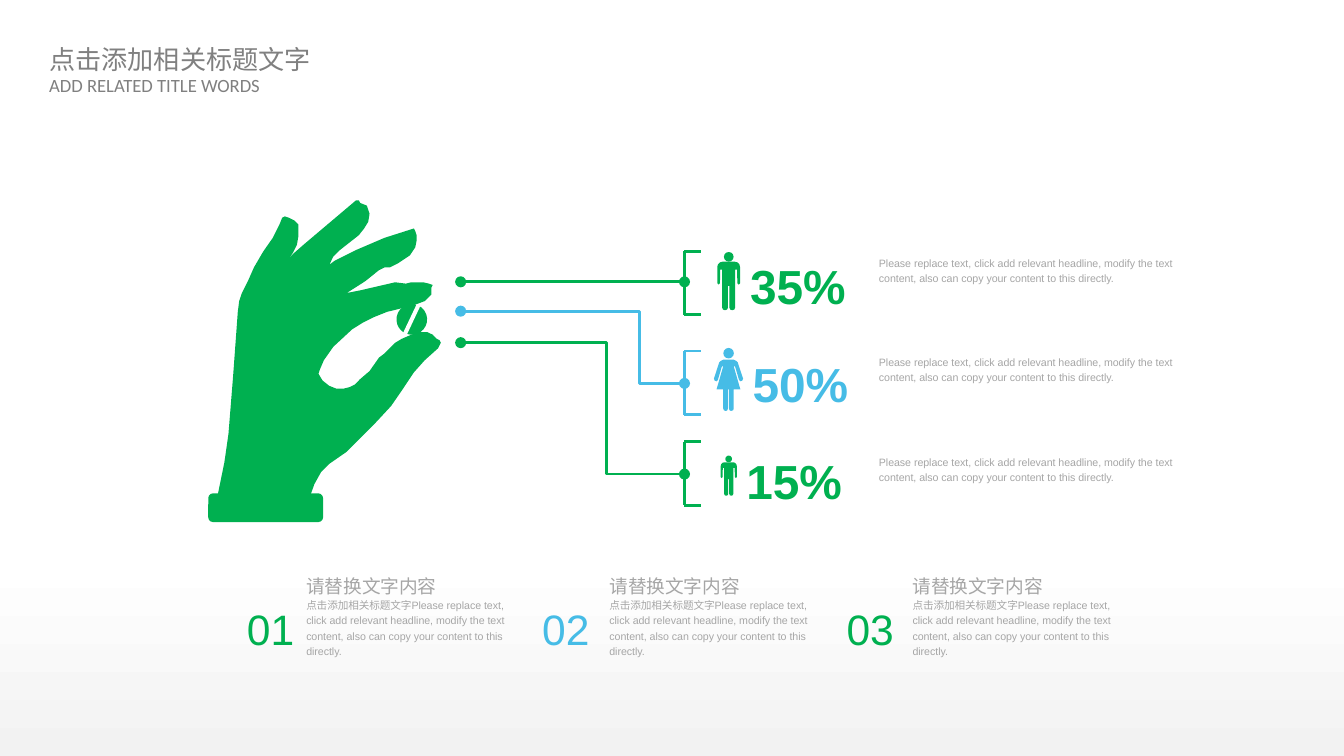
from lxml.etree import SubElement
from pptx import Presentation
from pptx.dml.color import RGBColor
from pptx.enum.shapes import MSO_CONNECTOR as Connector, MSO_SHAPE as Shape
from pptx.enum.text import MSO_ANCHOR as Anchor, PP_ALIGN as Align
from pptx.oxml.ns import qn
from pptx.util import Pt

GREEN = RGBColor(0x00, 0xB0, 0x50)
BLUE = RGBColor(0x46, 0xBC, 0xE6)
WHITE = RGBColor(0xFF, 0xFF, 0xFF)
PALE_GRAY = RGBColor(0xF2, 0xF2, 0xF2)
LIGHT_GRAY = RGBColor(0xA6, 0xA6, 0xA6)
GRAY = RGBColor(0x80, 0x80, 0x80)
CHINESE_FONT = "Noto Sans CJK SC"

TITLE = "点击添加相关标题文字"
DETAIL = ("Please replace text, click add relevant headline, modify the text "
          "content, also can copy your content to this directly.")

HAND = [
    (67, 229), (69, 226), (70, 222), (74, 211), (79, 202), (85, 196), (98, 187),
    (102, 183), (118, 167), (131, 153), (140, 140), (148, 128), (156, 119),
    (166, 110), (168, 106), (167, 104), (165, 103), (162, 100), (158, 98), (152, 98),
    (146, 100), (139, 103), (134, 106), (126, 114), (122, 117), (115, 127),
    (108, 133), (104, 137), (100, 139), (96, 140), (90, 140), (85, 138), (80, 134),
    (77, 129), (78, 126), (81, 119), (88, 109), (102, 96), (110, 91), (118, 87),
    (128, 83), (132, 82), (148, 78), (156, 75), (161, 70), (161, 65), (162, 63),
    (159, 62), (155, 61), (146, 61), (142, 62), (134, 61), (108, 67), (98, 69),
    (109, 62), (112, 60), (122, 52), (126, 50), (130, 50), (136, 47), (145, 41),
    (149, 35), (150, 30), (150, 26), (149, 23), (148, 21), (126, 28), (105, 37),
    (89, 45), (85, 48), (88, 42), (93, 37), (107, 26), (111, 21), (114, 16),
    (115, 10), (113, 4), (108, 2), (107, 0), (105, 0), (66, 33), (58, 40),
    (54, 45), (58, 39), (61, 33), (62, 27), (62, 18), (59, 15), (55, 13), (52, 12),
    (50, 13), (48, 18), (46, 22), (43, 28), (36, 38), (29, 50), (25, 59), (20, 69),
    (18, 75), (17, 83), (13.5, 131), (10, 174), (7, 195), (0, 229),
]
HAND_GRID = (169, 229)


def mirrored(half, width):
    return half + [(width - x, y) for x, y in reversed(half)]


MAN_GRID = (17, 36)
MAN = mirrored([
    (4, 0), (2, 0.5), (0.5, 2), (0, 4), (0, 16), (1, 17), (2, 16), (2.2, 6), (3.6, 6),
    (3.6, 34), (4.3, 35.5), (5.8, 36), (7.3, 35.5), (8, 34), (8, 18)], MAN_GRID[0])
WOMAN_GRID = (22, 39)
WOMAN = mirrored([
    (7, 1), (5, 2), (4, 3), (0, 15), (0.5, 16.5), (2, 17), (3, 16), (6, 6), (7, 6),
    (2, 23), (7, 23), (7, 37), (7.5, 38.5), (9, 39), (10.2, 38.5), (10.6, 37),
    (10.6, 23)], WOMAN_GRID[0])


def points(*values):
    return [Pt(value) for value in values]


def write_text(shape, text, size=5.7, color=LIGHT_GRAY, font="Arial", bold=False,
               align=Align.LEFT, anchor=Anchor.TOP, spacing=1.0, wrap=False,
               insets=(0, 0)):
    frame = shape.text_frame
    frame.word_wrap = wrap
    frame.vertical_anchor = anchor
    frame.margin_left = frame.margin_right = Pt(insets[0])
    frame.margin_top = frame.margin_bottom = Pt(insets[1])
    paragraph = frame.paragraphs[0]
    paragraph.alignment = align
    paragraph.line_spacing = spacing
    run = paragraph.add_run()
    run.text = text
    run.font.size = Pt(size)
    run.font.bold = bold
    run.font.color.rgb = color
    run.font.name = font
    SubElement(run.font._element, qn("a:ea"), typeface=CHINESE_FONT)


def add_text(slide, box, text, **style):
    write_text(slide.shapes.add_textbox(*points(*box)), text, **style)


def paint(shape, color):
    shape.shadow.inherit = False
    shape.fill.solid()
    shape.fill.fore_color.rgb = color
    shape.line.fill.background()


def add_preset(slide, kind, box, color, rotation=0):
    shape = slide.shapes.add_shape(kind, *points(*box))
    shape.rotation = rotation
    paint(shape, color)


def add_outline(slide, outline, grid, box, color):
    left, top, width, height = box
    placed = [points(left + x * width / grid[0], top + y * height / grid[1])
              for x, y in outline]
    builder = slide.shapes.build_freeform(*placed[0])
    builder.add_line_segments(placed[1:], close=True)
    paint(builder.convert_to_shape(), color)


def add_line(slide, start, end, color, bend=None, dots=False):
    kind = Connector.STRAIGHT if bend is None else Connector.ELBOW
    connector = slide.shapes.add_connector(kind, *points(*start, *end))
    connector.line.width = Pt(1.5)
    connector.line.color.rgb = color
    properties = connector._element.spPr
    if bend is not None:
        adjustments = properties.find(qn("a:prstGeom")).get_or_add_avLst()
        SubElement(adjustments, qn("a:gd"), name="adj1", fmla=f"val {round(bend * 100000)}")
    if dots:
        for tag in ("a:headEnd", "a:tailEnd"):
            SubElement(connector.line._get_or_add_ln(), qn(tag), type="oval")
    SubElement(properties, qn("a:effectLst"))


def add_heading(slide, left, top):
    title = slide.shapes.title
    title.left, title.top, title.width, title.height = points(left, top, 152, 22.3)
    write_text(title, TITLE, size=14, color=GRAY, font=CHINESE_FONT, insets=(5.67, 2.83))
    add_text(slide, (left, top + 16.5, 126, 17.3), "ADD RELATED TITLE WORDS",
             size=10, color=GRAY, font="Calibri", insets=(5.67, 2.83))


def add_hand(slide, left, top):
    add_outline(slide, HAND, HAND_GRID, (left + 3.6, top, 121.7, 165), GREEN)
    add_preset(slide, Shape.ROUNDED_RECTANGLE, (left, top + 157, 61.5, 15.4), GREEN)
    add_preset(slide, Shape.OVAL, (left + 100.8, top + 55.6, 16.4, 16.4), GREEN, 25.4)
    add_preset(slide, Shape.ROUNDED_RECTANGLE, (left + 107.9, top + 55.3, 2.2, 17),
               WHITE, 25.4)


def add_person(slide, outline, grid, box, color):
    left, top, width, height = box
    head = height / 6
    add_preset(slide, Shape.OVAL, (left + (width - head) / 2, top, head, head), color)
    add_outline(slide, outline, grid, (left, top + head, width, height - head), color)


def add_statistic(slide, left, top, color, value, value_left, value_top,
                  source, bend, person):
    height, arm = 34, 8.6
    add_line(slide, (left, top), (left, top + height), color)
    for y in (top, top + height):
        add_line(slide, (left, y), (left + arm, y), color)
    middle = top + height / 2 + 0.3 if bend else source[1]
    add_line(slide, source, (left, middle), color, bend=bend, dots=True)
    add_person(slide, *person, color)
    add_text(slide, (value_left, value_top, 51.8, 37.4), value, size=25.6, color=color,
             bold=True, anchor=Anchor.MIDDLE, spacing=1.2)


def add_step(slide, left, top, number, number_gap, color):
    add_text(slide, (left, top, 70.6, 14.4), "请替换文字内容", size=10,
             anchor=Anchor.MIDDLE, spacing=1.2)
    add_text(slide, (left, top + 13.7, 113, 33.1), TITLE + DETAIL,
             anchor=Anchor.MIDDLE, spacing=1.2, wrap=True)
    add_text(slide, (left - number_gap, top + 17.3, 29, 27.4), number, size=22.8,
             color=color, align=Align.CENTER, anchor=Anchor.BOTTOM)


def add_background(slide):
    fill = slide.background.fill
    fill.gradient()
    fill.gradient_angle = 90
    for stop, position, color in zip(fill.gradient_stops, (0, 0.26), (PALE_GRAY, WHITE)):
        stop.position = position
        stop.color.rgb = color


def main():
    presentation = Presentation()
    presentation.slide_width, presentation.slide_height = points(720, 405)
    slide = presentation.slides.add_slide(presentation.slide_layouts[5])
    add_background(slide)
    add_heading(slide, 20.7, 20.2)
    add_hand(slide, 111.6, 107.3)

    statistics = [
        (134.6, GREEN, "35%", 401.8, 131, (246.8, 151), None,
         (MAN, MAN_GRID, (384.3, 135, 12.2, 31.2))),
        (188.1, BLUE, "50%", 403.2, 183.4, (246.8, 166.7), 0.8,
         (WOMAN, WOMAN_GRID, (382.5, 186.4, 15.6, 33.8))),
        (236.7, GREEN, "15%", 399.8, 235.6, (246.8, 183.6), 0.65,
         (MAN, MAN_GRID, (386.1, 244.1, 8.6, 21.5))),
    ]
    for index, (top, *details) in enumerate(statistics):
        add_statistic(slide, 366.7, top, *details)
        add_text(slide, (470.9, 136.1 + 53.3 * index, 160.6, 16.6), DETAIL,
                 spacing=1.2, wrap=True)

    for index, (gap, color) in enumerate([(33.6, GREEN), (37.9, BLUE), (37.2, GREEN)]):
        add_step(slide, 164.1 + 162.4 * index, 305.7, f"0{index + 1}", gap, color)

    presentation.save("out.pptx")


if __name__ == "__main__":
    main()
